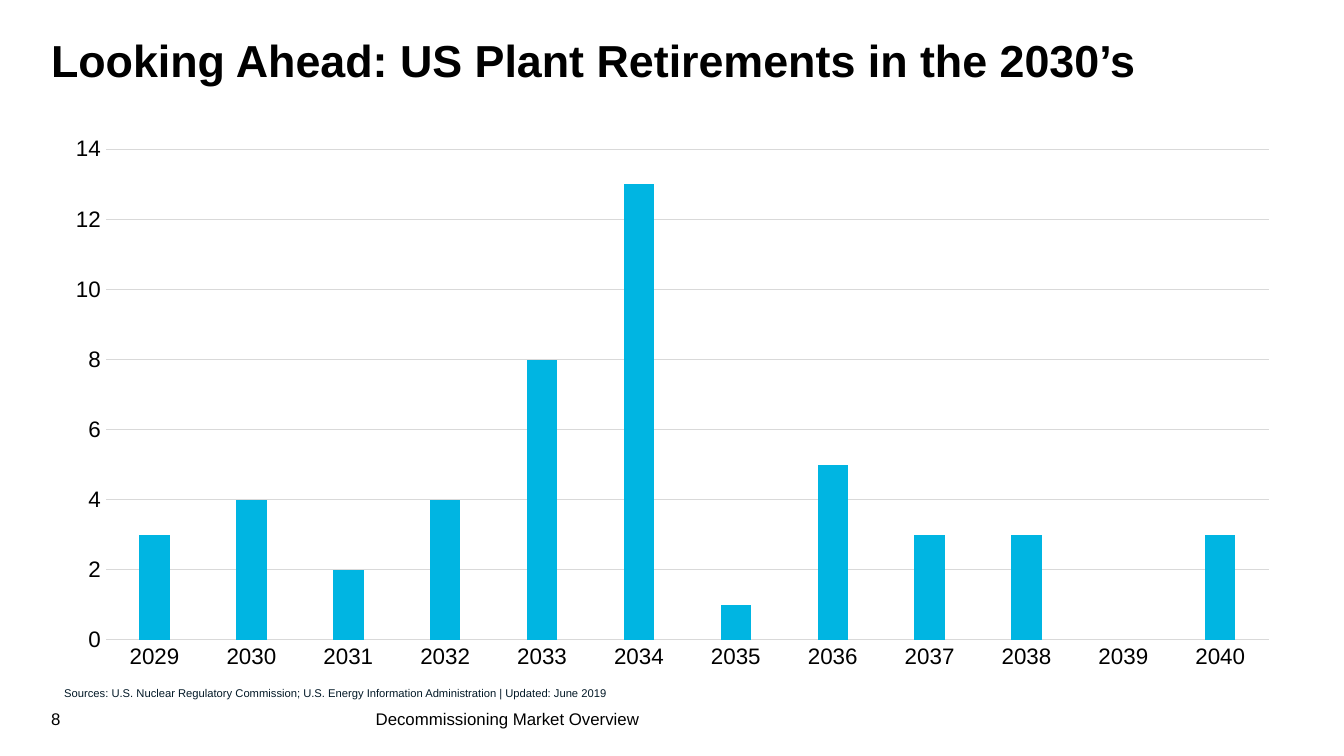
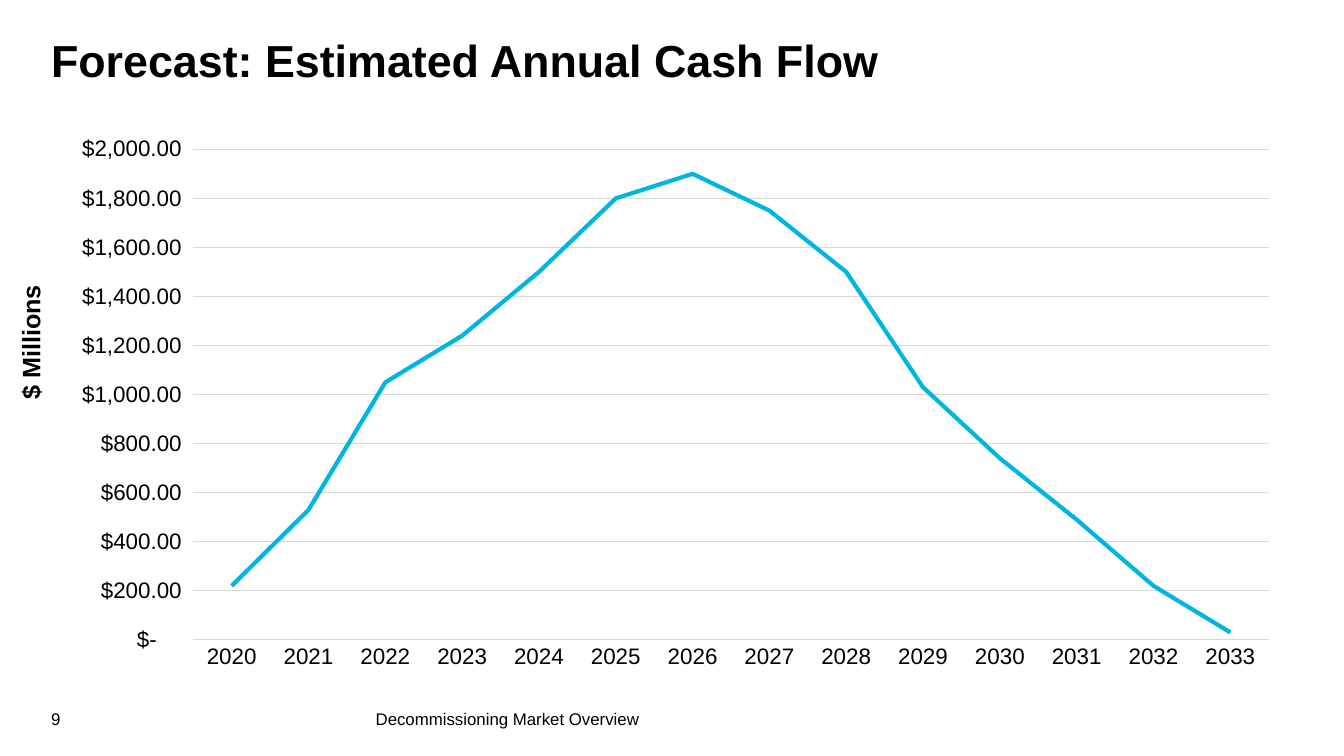
import pptx
import pptx.util
import pptx.chart.data
import pptx.dml.color
import pptx.enum.chart
import pptx.enum.text

PX = 4572
FONT = "Arial"
COLORS = {"text": "000000", "source": "031927", "accent": "00B5E2",
          "grid": "D9D9D9", "background": "FFFFFF"}
LEFT, WIDTH = 76, 1849
TITLE_HEIGHT = 188
CHART_HEIGHT = 824
FOOTER_TOP, FOOTER_HEIGHT = 1055, 30
FOOTER = "Decommissioning Market Overview"
DOLLARS = r'_("$"* #,##0.00_);_("$"* \(#,##0.00\);_("$"* "-"??_);_(@_)'


def emu(px):
    return pptx.util.Emu(px * PX)


def rgb(name):
    return pptx.dml.color.RGBColor.from_string(COLORS[name])


def add_text(slide, text, left, top, width, height, *, size, color="text", bold=False,
             insets=(0, 0, 0, 0), anchor="TOP", spacing=None, wrap=True, grow=False,
             rotation=0):
    sp = slide.shapes.add_textbox(*map(emu, (left, top, width, height)))
    sp.rotation = rotation
    tf = sp.text_frame
    tf.word_wrap = wrap
    if grow:
        tf.auto_size = pptx.enum.text.MSO_AUTO_SIZE.SHAPE_TO_FIT_TEXT
    tf.vertical_anchor = getattr(pptx.enum.text.MSO_ANCHOR, anchor)
    tf.margin_left, tf.margin_top, tf.margin_right, tf.margin_bottom = map(emu, insets)
    p = tf.paragraphs[0]
    if spacing:
        p.line_spacing = spacing
    r = p.add_run()
    r.text = text
    r.font.name = FONT
    r.font.size = pptx.util.Pt(size)
    r.font.bold = bold
    r.font.color.rgb = rgb(color)
    return sp


def style_line(line, color, width):
    line.color.rgb = rgb(color)
    line.width = pptx.util.Pt(width)


def add_year_chart(slide, kind, first_year, values, top, step, number_format="General"):
    data = pptx.chart.data.CategoryChartData()
    data.categories = [float(first_year + i) for i in range(len(values))]
    data.add_series("Series 1", values)
    chart = slide.shapes.add_chart(
        getattr(pptx.enum.chart.XL_CHART_TYPE, kind),
        *map(emu, (LEFT, TITLE_HEIGHT, WIDTH, CHART_HEIGHT)), data).chart
    chart.has_title = False
    chart.has_legend = False
    chart.font.name = FONT
    chart.font.size = pptx.util.Pt(12)
    chart.font.color.rgb = rgb("text")
    for axis in (chart.category_axis, chart.value_axis):
        axis.major_tick_mark = pptx.enum.chart.XL_TICK_MARK.NONE
        axis.minor_tick_mark = pptx.enum.chart.XL_TICK_MARK.NONE
    style_line(chart.category_axis.format.line, "grid", 0.75)
    axis = chart.value_axis
    axis.minimum_scale, axis.maximum_scale, axis.major_unit = 0, top, step
    axis.format.line.fill.background()
    style_line(axis.major_gridlines.format.line, "grid", 0.75)
    axis.tick_labels.number_format = number_format
    axis.tick_labels.number_format_is_linked = False
    plot = chart.plots[0]
    plot.vary_by_categories = False
    return plot


def add_retirement_columns(slide, values):
    plot = add_year_chart(slide, "COLUMN_CLUSTERED", 2029, values, 14, 2)
    plot.gap_width = 219
    plot.overlap = -27
    fill = plot.series[0].format.fill
    fill.solid()
    fill.fore_color.rgb = rgb("accent")


def add_cash_flow_line(slide, values):
    plot = add_year_chart(slide, "LINE", 2020, values, 2000, 200, DOLLARS)
    series = plot.series[0]
    series.smooth = False
    series.marker.style = pptx.enum.chart.XL_MARKER_STYLE.NONE
    style_line(series.format.line, "accent", 2.25)


def add_slide(prs, number, title):
    slide = prs.slides.add_slide(prs.slide_layouts[6])
    fill = slide.background.fill
    fill.solid()
    fill.fore_color.rgb = rgb("background")
    add_text(slide, str(number), LEFT, FOOTER_TOP, 74, FOOTER_HEIGHT, size=9)
    add_text(slide, FOOTER, 559, FOOTER_TOP, 884, FOOTER_HEIGHT, size=9)
    add_text(slide, title, LEFT, 0, WIDTH, TITLE_HEIGHT, size=24, bold=True,
             insets=(0, 10, 0, 10), anchor="MIDDLE", spacing=0.9)
    return slide


def main():
    prs = pptx.Presentation()
    prs.slide_width, prs.slide_height = emu(2000), emu(1125)

    slide = add_slide(prs, 8, "Looking Ahead: US Plant Retirements in the 2030’s")
    add_retirement_columns(slide, [3, 4, 2, 4, 8, 13, 1, 5, 3, 3, None, 3])
    add_text(slide, "Sources: U.S. Nuclear Regulatory Commission; "
             "U.S. Energy Information Administration | Updated: June 2019",
             LEFT, TITLE_HEIGHT + CHART_HEIGHT, WIDTH, 40, size=6, color="source",
             insets=(20, 10, 20, 10), grow=True)

    slide = add_slide(prs, 9, "Forecast: Estimated Annual Cash Flow")
    add_cash_flow_line(slide, [220, 530, 1050, 1240, 1500, 1800, 1900,
                               1750, 1500, 1030, 740, 490, 220, 30])
    add_text(slide, "$ Millions", -60, 475, 212, 66, size=13.5, bold=True,
             insets=(20, 10, 20, 10), wrap=False, grow=True, rotation=270)

    prs.save("out.pptx")


if __name__ == "__main__":
    main()
